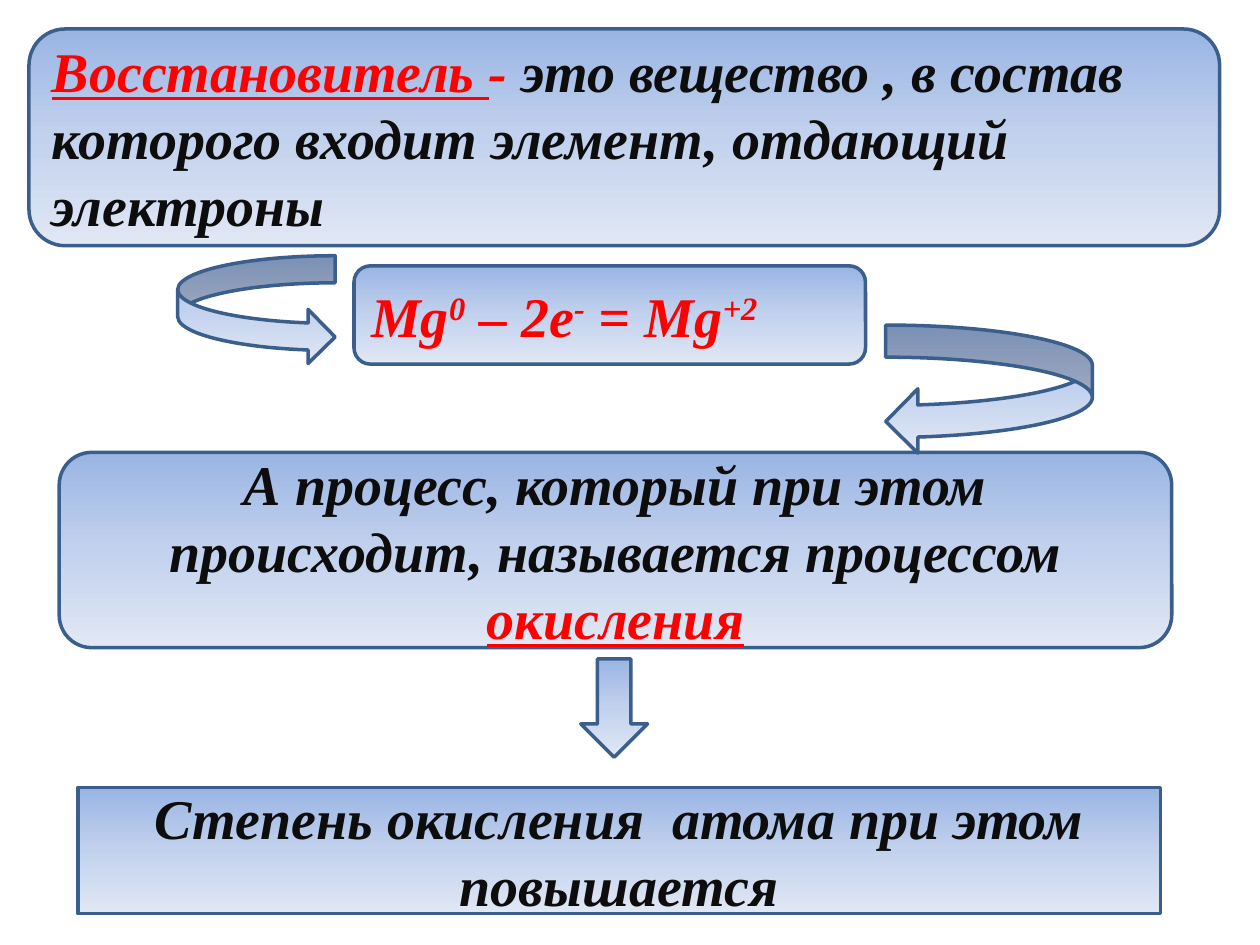
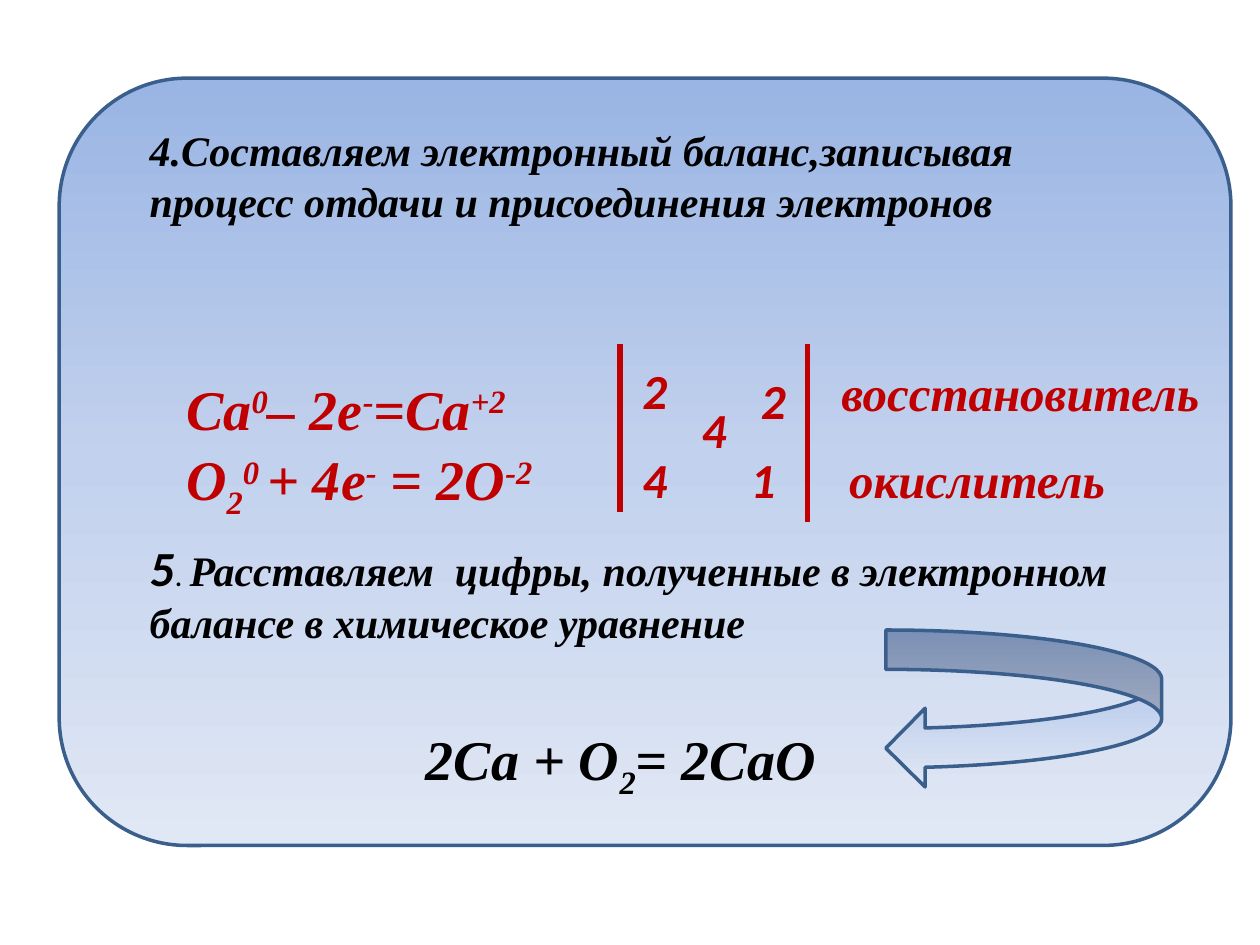
from copy import deepcopy
from dataclasses import dataclass

from lxml.etree import SubElement
from pptx import Presentation
from pptx.dml.color import RGBColor
from pptx.enum.shapes import MSO_CONNECTOR, MSO_SHAPE as Preset
from pptx.enum.text import MSO_ANCHOR, MSO_AUTO_SIZE, PP_ALIGN
from pptx.oxml.ns import qn
from pptx.util import Inches, Pt

RED = RGBColor(0xFF, 0x00, 0x00)
DARK_RED = RGBColor(0xC0, 0x00, 0x00)
INK = RGBColor(0x0D, 0x0D, 0x0D)
BLACK = RGBColor(0x00, 0x00, 0x00)
OUTLINE = RGBColor(0x3A, 0x5F, 0x8C)
GRADIENT = (
    (0, RGBColor(0x9A, 0xB5, 0xE4)),
    (0.5, RGBColor(0xC2, 0xD1, 0xED)),
    (1, RGBColor(0xE1, 0xE8, 0xF5)),
)
SERIF, SANS = "Times New Roman", "Calibri"
SUPER, SUB = 30000, -25000


@dataclass(frozen=True)
class Span:
    text: str
    baseline: int = 0
    color: RGBColor | None = None
    underline: bool = False
    font: str | None = None
    size: int | None = None
    plain: bool = False


Line = tuple[Span, ...]


@dataclass(frozen=True)
class Box:
    left: float
    top: float
    width: float
    height: float

    def lengths(self):
        return [Inches(v) for v in (self.left, self.top, self.width, self.height)]


@dataclass(frozen=True)
class Panel:
    box: Box
    preset: Preset = Preset.ROUNDED_RECTANGLE
    lines: tuple[Line, ...] = ()
    color: RGBColor = INK
    align: PP_ALIGN = PP_ALIGN.LEFT
    corner: float | None = None


@dataclass(frozen=True)
class Label:
    box: Box
    lines: tuple[Line, ...]
    size: int
    color: RGBColor
    font: str = SERIF
    wrap: bool = False
    space_before: int = 0


@dataclass(frozen=True)
class Rule:
    x: float
    top: float
    bottom: float


def write_lines(frame, lines: tuple[Line, ...], size: int, color: RGBColor,
                font: str = SERIF, align: PP_ALIGN = PP_ALIGN.LEFT,
                space_before: int = 0) -> None:
    for index, line in enumerate(lines):
        paragraph = frame.add_paragraph() if index else frame.paragraphs[0]
        paragraph.alignment = align
        if index and space_before:
            paragraph.space_before = Pt(space_before)
        paragraph.font.name = font
        paragraph.font.size = Pt(size)
        paragraph.font.bold = paragraph.font.italic = True
        paragraph.font.color.rgb = color
        for span in line:
            run = paragraph.add_run()
            run.text = span.text
            if span.baseline:
                run._r.get_or_add_rPr().set("baseline", str(span.baseline))
            if span.color is not None:
                run.font.color.rgb = span.color
            if span.underline:
                run.font.underline = True
            if span.font:
                run.font.name = span.font
            if span.size:
                run.font.size = Pt(span.size)
            if span.plain:
                run.font.bold = run.font.italic = False


def draw_panel(slide, panel: Panel) -> None:
    shape = slide.shapes.add_shape(panel.preset, *panel.box.lengths())
    shape.shadow.inherit = False
    if panel.corner is not None:
        shape.adjustments[0] = panel.corner
    shape.fill.gradient()
    shape.fill.gradient_angle = 270
    stop_list = shape._element.spPr.find(".//" + qn("a:gsLst"))
    stop_list.append(deepcopy(stop_list[-1]))
    for stop, (position, color) in zip(shape.fill.gradient_stops, GRADIENT):
        stop.position = position
        stop.color.rgb = color
    shape.line.color.rgb = OUTLINE
    shape.line.width = Pt(2)
    if panel.lines:
        frame = shape.text_frame
        frame.word_wrap = True
        frame.vertical_anchor = MSO_ANCHOR.MIDDLE
        write_lines(frame, panel.lines, 32, panel.color, align=panel.align)


def draw_label(slide, label: Label) -> None:
    frame = slide.shapes.add_textbox(*label.box.lengths()).text_frame
    frame.word_wrap = label.wrap
    frame.auto_size = MSO_AUTO_SIZE.SHAPE_TO_FIT_TEXT
    write_lines(frame, label.lines, label.size, label.color, label.font,
                space_before=label.space_before)


def draw_rule(slide, rule: Rule) -> None:
    x = Inches(rule.x)
    line = slide.shapes.add_connector(
        MSO_CONNECTOR.STRAIGHT, x, Inches(rule.top), x, Inches(rule.bottom))
    line.line.color.rgb = DARK_RED
    line.line.width = Pt(3)
    SubElement(line._element.spPr, qn("a:effectLst"))


def digit(text: str, left: float, top: float) -> Label:
    return Label(Box(left, top, 0.4, 0.57), ((Span(text),),), 28, DARK_RED, SANS)


DRAW = {Panel: draw_panel, Label: draw_label, Rule: draw_rule}

REDUCER_SLIDE = (
    Panel(Box(0.23, 0.23, 9.45, 1.72), lines=((
        Span("Восстановитель ", color=RED, underline=True),
        Span("- ", color=RED),
        Span("это вещество , в состав которого входит элемент, отдающий электроны"),
    ),)),
    Panel(Box(2.81, 2.11, 4.06, 0.78), color=RED, lines=((
        Span("Mg"), Span("0", SUPER), Span(" – 2e"), Span("-", SUPER),
        Span(" = Mg"), Span("+2", SUPER),
    ),)),
    Panel(Box(0.47, 3.59, 8.83, 1.55), align=PP_ALIGN.CENTER, lines=((
        Span("А процесс, который при этом происходит, называется процессом "),
        Span("окисления", color=RED, underline=True),
    ),)),
    Panel(Box(0.62, 6.25, 8.59, 1), align=PP_ALIGN.CENTER, corner=0, lines=((
        Span("Степень окисления  атома при этом повышается"),
    ),)),
    Panel(Box(1.41, 2.03, 1.25, 0.86), Preset.CURVED_RIGHT_ARROW),
    Panel(Box(4.61, 5.23, 0.53, 0.78), Preset.DOWN_ARROW),
    Panel(Box(7.03, 2.58, 1.64, 1.02), Preset.CURVED_LEFT_ARROW),
)

BALANCE_SLIDE = (
    Panel(Box(0.47, 0.62, 9.3, 6.09)),
    Label(Box(1.38, 2.92, 5.4, 1.18), (
        (Span("Ca"), Span("0", SUPER), Span("– 2e"), Span("-", SUPER),
         Span("=Ca"), Span("+2", SUPER)),
        (Span("O"), Span("2", SUB), Span("0 ", SUPER), Span("+ 4e"),
         Span("-", SUPER), Span(" = 2O"), Span("-2", SUPER)),
    ), 32, DARK_RED, wrap=True, space_before=2),
    Rule(4.92, 2.73, 4.06),
    digit("2", 5, 2.81),
    digit("4", 5, 3.52),
    digit("4", 5.47, 3.12),
    digit("1", 5.86, 3.52),
    Rule(6.41, 2.73, 4.14),
    Label(Box(6.58, 2.83, 3.18, 0.57), ((Span("восстановитель"),),), 28, DARK_RED),
    Label(Box(6.64, 3.52, 2.29, 0.57), ((Span("окислитель"),),), 28, DARK_RED),
    Label(Box(1.09, 4.22, 8.44, 0.98), ((
        Span("5", font=SANS, size=28),
        Span(". ", font=SANS, size=18, plain=True),
        Span("Расставляем  цифры, полученные в электронном балансе "
             "в химическое уравнение"),
    ),), 24, BLACK, wrap=True),
    Panel(Box(7.03, 5, 2.19, 1.25), Preset.CURVED_LEFT_ARROW),
    Label(Box(3.28, 5.7, 3.35, 0.64), (
        (Span("2Ca + O"), Span("2", SUB), Span("= 2CaO")),
    ), 32, BLACK),
    Label(Box(1.09, 0.94, 8.13, 1.22), (
        (Span("4.Составляем электронный баланс,записывая"),),
        (Span("процесс отдачи и присоединения электронов"),),
    ), 24, BLACK, wrap=True),
    digit("2", 5.94, 2.89),
)


def main() -> None:
    deck = Presentation()
    deck.slide_width, deck.slide_height = Inches(10), Inches(7.5)
    for elements in (REDUCER_SLIDE, BALANCE_SLIDE):
        slide = deck.slides.add_slide(deck.slide_layouts[6])
        for element in elements:
            DRAW[type(element)](slide, element)
    deck.save("out.pptx")


if __name__ == "__main__":
    main()
